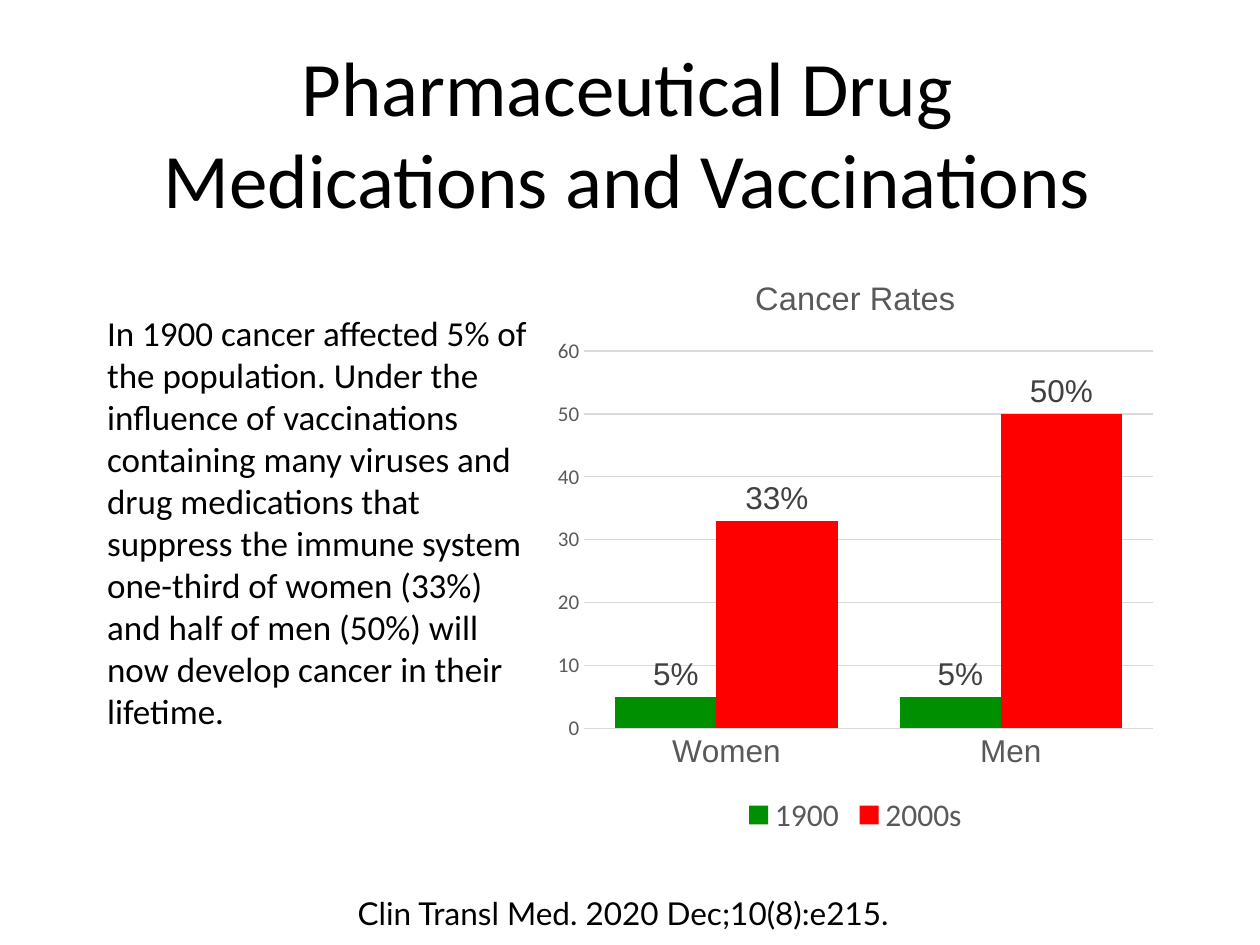
from lxml import etree
from pptx import Presentation
from pptx.chart.data import CategoryChartData
from pptx.dml.color import RGBColor
from pptx.enum.chart import XL_CHART_TYPE, XL_LABEL_POSITION, XL_LEGEND_POSITION, XL_TICK_MARK
from pptx.enum.text import MSO_ANCHOR, MSO_AUTO_SIZE, PP_ALIGN
from pptx.oxml.ns import qn
from pptx.util import Inches, Pt

COLUMN = XL_CHART_TYPE.COLUMN_CLUSTERED
OUTSIDE_END = XL_LABEL_POSITION.OUTSIDE_END
BOTTOM = XL_LEGEND_POSITION.BOTTOM
NO_TICK = XL_TICK_MARK.NONE
MIDDLE = MSO_ANCHOR.MIDDLE
TOP = MSO_ANCHOR.TOP
NO_AUTOFIT = MSO_AUTO_SIZE.NONE
FIT_SHAPE = MSO_AUTO_SIZE.SHAPE_TO_FIT_TEXT
CENTER = PP_ALIGN.CENTER
LEFT = PP_ALIGN.LEFT

BLACK = "000000"
GREY = "595959"
LABEL_GREY = "404040"
GRID_GREY = "D9D9D9"
RATES = [("1900", (5, 5), "008F00"), ("2000s", (33, 50), "FF0000")]


def color(value):
    return RGBColor.from_string(value)


def style_font(font, name, size, value):
    font.name = name
    font.size = Pt(size)
    font.bold = False
    font.color.rgb = color(value)


def style_line(line, value):
    line.color.rgb = color(value)
    line.width = Pt(0.75)


def fill_placeholder(shape, box, text, size, alignment, anchor):
    shape.left, shape.top, shape.width, shape.height = map(Inches, box)
    frame = shape.text_frame
    frame.text = text
    frame.word_wrap = True
    frame.auto_size = NO_AUTOFIT
    frame.vertical_anchor = anchor
    paragraph = frame.paragraphs[0]
    paragraph.alignment = alignment
    paragraph.space_before = Pt(0)
    style_font(paragraph.font, "Calibri", size, BLACK)
    return paragraph


def remove_bullet(paragraph):
    properties = paragraph._p.get_or_add_pPr()
    properties.set("marL", "0")
    properties.set("indent", "0")
    bullet = etree.Element(qn("a:buNone"))
    properties.insert_element_before(bullet, "a:tabLst", "a:defRPr", "a:extLst")


def add_citation(slide, box, text):
    shape = slide.shapes.add_textbox(*map(Inches, box))
    frame = shape.text_frame
    frame.text = text
    frame.word_wrap = False
    frame.auto_size = FIT_SHAPE
    style_font(frame.paragraphs[0].font, "Lato", 18, BLACK)


def style_axes(chart):
    categories = chart.category_axis
    categories.major_tick_mark = NO_TICK
    style_font(categories.tick_labels.font, "Arial", 18, GREY)
    style_line(categories.format.line, GRID_GREY)

    values = chart.value_axis
    values.minimum_scale = 0
    values.maximum_scale = 60
    values.major_unit = 10
    values.major_tick_mark = NO_TICK
    style_font(values.tick_labels.font, "Calibri", 12, GREY)
    values.format.line.fill.background()
    style_line(values.major_gridlines.format.line, GRID_GREY)


def style_series(series, fill):
    series.format.fill.solid()
    series.format.fill.fore_color.rgb = color(fill)
    series.invert_if_negative = False
    labels = series.data_labels
    labels.show_value = True
    labels.number_format = '0"%"'
    labels.number_format_is_linked = False
    labels.position = OUTSIDE_END
    style_font(labels.font, "Arial", 18, LABEL_GREY)


def add_rate_chart(slide, box):
    data = CategoryChartData()
    data.categories = ["Women", "Men"]
    for name, values, _ in RATES:
        data.add_series(name, values)
    chart = slide.shapes.add_chart(COLUMN, *map(Inches, box), data).chart
    style_font(chart.font, "Calibri", 10, BLACK)

    chart.has_title = True
    title = chart.chart_title
    title.include_in_layout = False
    title.text_frame.text = "Cancer Rates"
    style_font(title.text_frame.paragraphs[0].font, "Arial", 18.6, GREY)

    chart.has_legend = True
    chart.legend.position = BOTTOM
    chart.legend.include_in_layout = False
    style_font(chart.legend.font, "Calibri", 18, GREY)

    style_axes(chart)
    plot = chart.plots[0]
    plot.gap_width = 51
    plot.overlap = 17
    plot.vary_by_categories = False
    for series, (_, _, fill) in zip(plot.series, RATES):
        style_series(series, fill)


def main():
    presentation = Presentation()
    presentation.slide_width = Inches(10)
    presentation.slide_height = Inches(7.5)
    slide = presentation.slides.add_slide(presentation.slide_layouts[1])
    title, body = slide.placeholders

    fill_placeholder(
        title, (0.73, 0.42, 8.5, 1.25),
        "Pharmaceutical Drug Medications and Vaccinations", 44, CENTER, MIDDLE,
    )
    paragraph = fill_placeholder(
        body, (0.75, 2.42, 3.58, 4.25),
        "In 1900 cancer affected 5% of the population. Under the influence of "
        "vaccinations containing many viruses and drug medications that suppress "
        "the immune system one-third of women (33%) and half of men (50%) will "
        "now develop cancer in their lifetime.", 20, LEFT, TOP,
    )
    remove_bullet(paragraph)
    add_rate_chart(slide, (4.33, 2, 4.92, 4.67))
    add_citation(slide, (2.74, 7.05, 4.51, 0.4), "Clin Transl Med. 2020 Dec;10(8):e215.")
    presentation.save("out.pptx")


if __name__ == "__main__":
    main()
